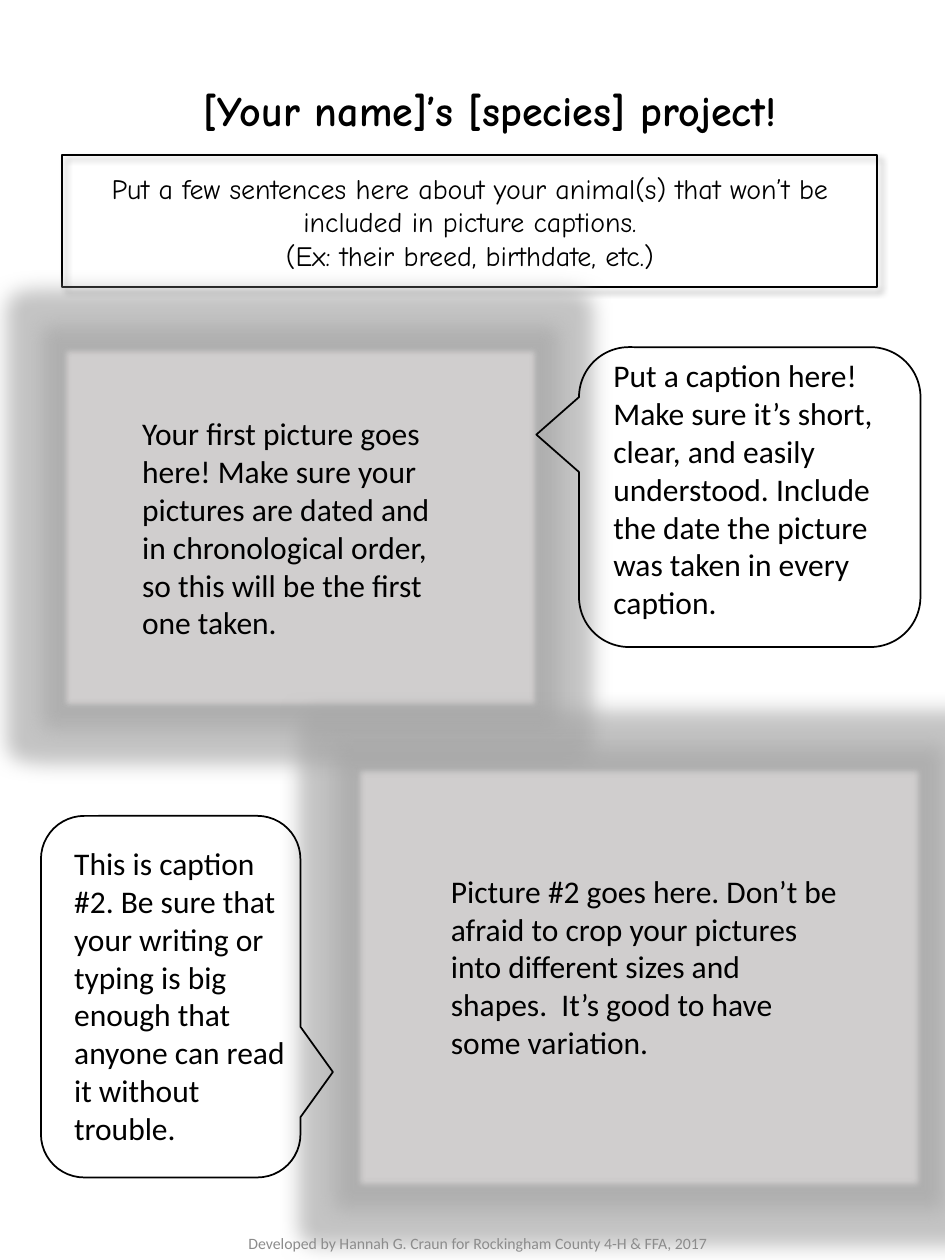
from dataclasses import dataclass

from lxml import etree
from pptx import Presentation
from pptx.dml.color import RGBColor
from pptx.enum.shapes import MSO_SHAPE
from pptx.enum.text import MSO_ANCHOR, PP_ALIGN
from pptx.oxml.ns import qn
from pptx.util import Inches, Pt

BLACK = RGBColor(0x00, 0x00, 0x00)
FRAME_GRAY = RGBColor(0xD0, 0xCE, 0xCE)
GLOW_GRAY = RGBColor(0xA5, 0xA5, 0xA5)
FOOTER_GRAY = RGBColor(0x8C, 0x8C, 0x8C)
RECTANGLE = MSO_SHAPE.RECTANGLE
CALLOUT = MSO_SHAPE.ROUNDED_RECTANGULAR_CALLOUT
LEFT, CENTER = PP_ALIGN.LEFT, PP_ALIGN.CENTER
TOP, MIDDLE = MSO_ANCHOR.TOP, MSO_ANCHOR.MIDDLE


@dataclass(frozen=True)
class Box:
    left: float
    top: float
    width: float
    height: float

    def lengths(self):
        return [Inches(v) for v in (self.left, self.top, self.width, self.height)]


@dataclass(frozen=True)
class TextStyle:
    font: str
    size: float
    color: RGBColor = BLACK
    bold: bool = False
    alignment: PP_ALIGN = LEFT
    anchor: MSO_ANCHOR = TOP


@dataclass(frozen=True)
class PictureFrame:
    box: Box
    text_box: Box
    text: str


@dataclass(frozen=True)
class Caption:
    box: Box
    rotation: float
    text_box: Box
    paragraphs: tuple[str, ...]


TITLE = TextStyle("Comic Neue", 24, bold=True, alignment=CENTER)
INTRO = TextStyle("Comic Neue", 16, alignment=CENTER)
BODY = TextStyle("Calibri", 18)
FOOTER = TextStyle("Calibri", 9, FOOTER_GRAY, alignment=CENTER, anchor=MIDDLE)

FRAMES = (
    PictureFrame(
        Box(0.49, 2.75, 3.78, 2.87), Box(1.03, 3.24, 2.7, 1.92),
        "Your first picture goes here! Make sure your pictures are dated and in "
        "chronological order, so this will be the first one taken."),
    PictureFrame(
        Box(2.82, 6.09, 4.51, 3.35), Box(3.48, 6.87, 3.31, 1.62),
        "Picture #2 goes here. Don’t be afraid to crop your pictures into "
        "different sizes and shapes.  It’s good to have some variation."),
)
CAPTIONS = (
    Caption(
        Box(4.76, 2.59, 2.38, 2.71), 90, Box(4.77, 2.78, 2.37, 2.22),
        ("Put a caption here!",
         "Make sure it’s short, clear, and easily understood. Include the date "
         "the picture was taken in every caption.")),
    Caption(
        Box(-0.08, 6.88, 2.87, 2.06), 270, Box(0.49, 6.65, 1.99, 2.52),
        ("This is caption #2. Be sure that your writing or typing is big enough "
         "that anyone can read it without trouble.",)),
)


def add_text(slide, box: Box, style: TextStyle, *paragraphs: str) -> None:
    frame = slide.shapes.add_textbox(*box.lengths()).text_frame
    frame.word_wrap = True
    frame.vertical_anchor = style.anchor
    for index, text in enumerate(paragraphs):
        paragraph = frame.add_paragraph() if index else frame.paragraphs[0]
        paragraph.alignment = style.alignment
        run = paragraph.add_run()
        run.text = text
        run.font.name = style.font
        run.font.size = Pt(style.size)
        run.font.bold = style.bold
        run.font.color.rgb = style.color


def add_outline(slide, kind: MSO_SHAPE, box: Box, rotation: float = 0):
    shape = slide.shapes.add_shape(kind, *box.lengths())
    shape.rotation = rotation
    shape.shadow.inherit = False
    shape.fill.background()
    shape.line.color.rgb = BLACK
    shape.line.width = Pt(1)
    return shape


def add_effect(shape, tag: str, color: RGBColor, opacity: int, **attributes) -> None:
    """Append a coloured effect; opacity is a percentage."""
    effects = shape.element.spPr.find(qn("a:effectLst"))
    effect = etree.SubElement(effects, qn(tag))
    for name, value in attributes.items():
        effect.set(name, str(value))
    tint = etree.SubElement(effect, qn("a:srgbClr"), val=str(color))
    etree.SubElement(tint, qn("a:alpha"), val=str(opacity * 1000))


def add_picture_frame(slide, frame: PictureFrame) -> None:
    shape = slide.shapes.add_shape(RECTANGLE, *frame.box.lengths())
    shape.shadow.inherit = False
    shape.fill.solid()
    shape.fill.fore_color.rgb = FRAME_GRAY
    shape.line.fill.background()
    add_effect(shape, "a:glow", GLOW_GRAY, 65, rad=Inches(0.32))
    effects = shape.element.spPr.find(qn("a:effectLst"))
    etree.SubElement(effects, qn("a:softEdge"), rad=str(Pt(2.5)))
    add_text(slide, frame.text_box, BODY, frame.text)


def add_caption(slide, caption: Caption) -> None:
    add_text(slide, caption.text_box, BODY, *caption.paragraphs)
    add_outline(slide, CALLOUT, caption.box, caption.rotation)


def main() -> None:
    presentation = Presentation()
    presentation.slide_width = Inches(7.5)
    presentation.slide_height = Inches(10)
    slide = presentation.slides.add_slide(presentation.slide_layouts[6])

    add_text(slide, Box(0.81, 0.62, 6.16, 0.5), TITLE,
             "[Your name]’s [species] project!")
    intro = add_outline(slide, RECTANGLE, Box(0.49, 1.23, 6.47, 1.05))
    add_effect(intro, "a:outerShdw", BLACK, 40, blurRad=Pt(4), dist=Pt(3),
               dir=45 * 60000, algn="tl", rotWithShape=0)
    add_text(slide, Box(0.67, 1.31, 6.12, 0.91), INTRO,
             "Put a few sentences here about your animal(s) that won’t be "
             "included in picture captions.",
             "(Ex: their breed, birthdate, etc.)")
    for frame in FRAMES:
        add_picture_frame(slide, frame)
    for caption in CAPTIONS:
        add_caption(slide, caption)
    add_text(slide, Box(0.32, 9.73, 6.94, 0.28), FOOTER,
             "Developed by Hannah G. Craun for Rockingham County 4-H & FFA, 2017")

    presentation.save("out.pptx")


if __name__ == "__main__":
    main()
